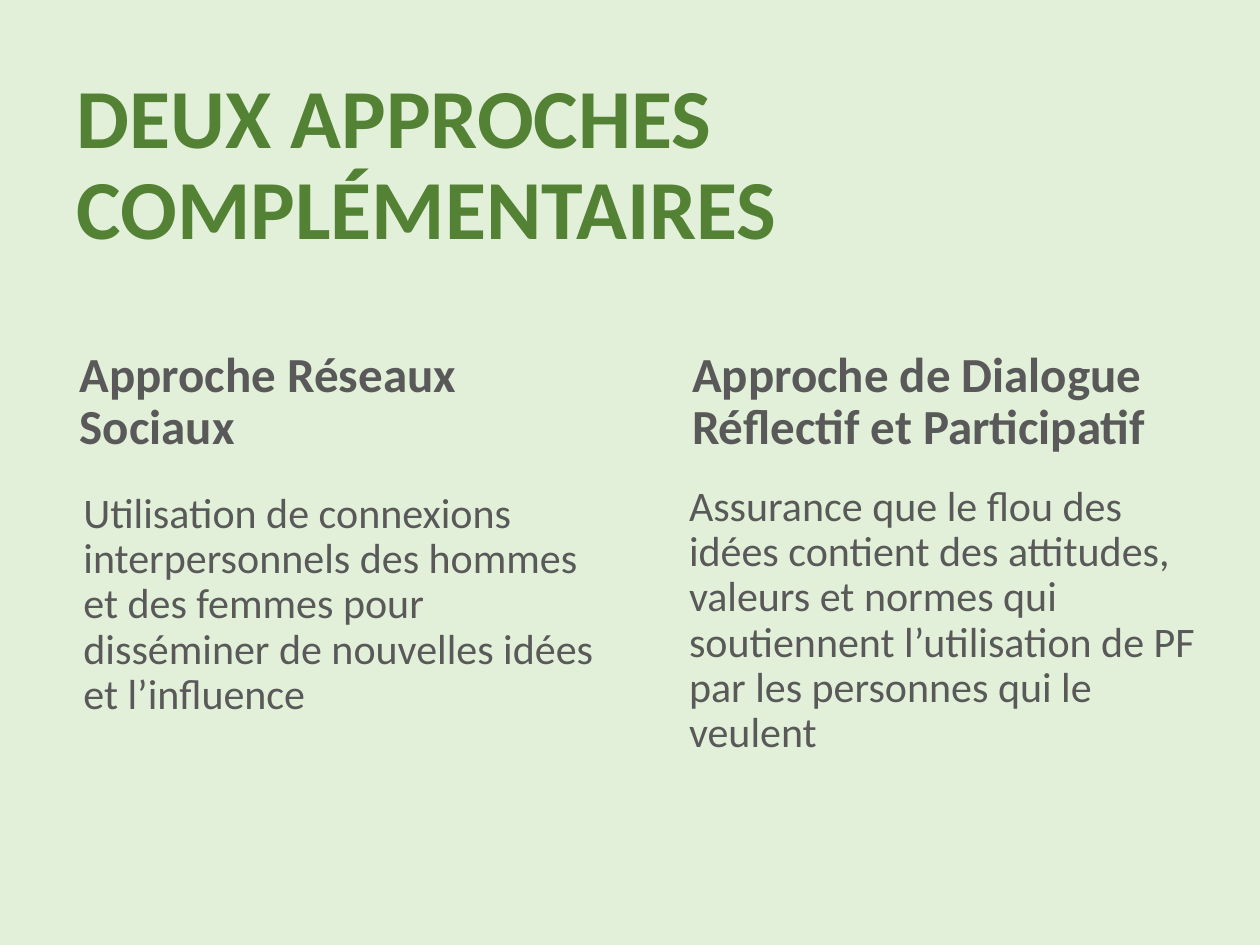
from pptx import Presentation
from pptx.dml.color import RGBColor
from pptx.enum.shapes import MSO_SHAPE
from pptx.enum.text import MSO_ANCHOR, MSO_AUTO_SIZE, PP_ALIGN
from pptx.util import Inches, Pt

ROUNDED, PLAIN = MSO_SHAPE.ROUNDED_RECTANGLE, MSO_SHAPE.RECTANGLE
TOP, MIDDLE, BOTTOM = MSO_ANCHOR.TOP, MSO_ANCHOR.MIDDLE, MSO_ANCHOR.BOTTOM
COLORS = {"background": "E2F0D9", "title": "548235", "text": "595959"}
FONT = "Calibri"

TITLE = "DEUX APPROCHES COMPLÉMENTAIRES"
APPROACHES = [
    {
        "heading": "Approche Réseaux Sociaux",
        "description": "Utilisation de connexions interpersonnels des hommes et des "
                       "femmes pour disséminer de nouvelles idées et l’influence",
        "panel": ROUNDED,
    },
    {
        "heading": "Approche de Dialogue Réflectif et Participatif",
        "description": "Assurance que le flou des idées contient des attitudes, "
                       "valeurs et normes qui soutiennent l’utilisation de PF "
                       "par les personnes qui le veulent",
        "panel": PLAIN,
    },
]

LEFT, COLUMN_WIDTH, COLUMN_STEP = 0.51, 4.42, 4.86
HEADING_TOP, HEADING_HEIGHT = 2.48, 1.21
DESCRIPTION_TOP, DESCRIPTION_HEIGHT = 3.8, 3.7
CORNER_RADIUS = 0.08 if HEADING_HEIGHT < 1 else 0.2


def write(shape, text, size, color, bold, anchor, space_before=0):
    frame = shape.text_frame
    frame.text = text
    frame.word_wrap = True
    frame.auto_size = MSO_AUTO_SIZE.NONE
    frame.vertical_anchor = anchor
    paragraph = frame.paragraphs[0]
    paragraph.alignment = PP_ALIGN.LEFT
    paragraph.line_spacing = 0.9
    paragraph.space_before = Pt(space_before)
    font = paragraph.runs[0].font
    font.name, font.size, font.bold = FONT, Pt(size), bold
    font.color.rgb = RGBColor.from_string(COLORS[color])


def add_panel(slide, kind, left, top, height, corner):
    """Add an invisible panel whose rounded corners inset its text."""
    panel = slide.shapes.add_shape(
        kind, Inches(left), Inches(top), Inches(COLUMN_WIDTH), Inches(height))
    panel.shadow.inherit = False
    panel.fill.background()
    panel.line.fill.background()
    if kind == ROUNDED:
        panel.adjustments[0] = corner
    return panel


def main():
    deck = Presentation()
    deck.slide_width, deck.slide_height = Inches(10), Inches(7.5)
    slide = deck.slides.add_slide(deck.slide_layouts[5])
    background = slide.background.fill
    background.solid()
    background.fore_color.rgb = RGBColor.from_string(COLORS["background"])

    title = slide.shapes.title
    title.left, title.top = Inches(LEFT), Inches(0.99)
    title.width, title.height = Inches(8.62), Inches(0.67)
    write(title, TITLE, 48, "title", True, MIDDLE)

    for column, approach in enumerate(APPROACHES):
        left = LEFT + column * COLUMN_STEP
        heading = add_panel(slide, ROUNDED, left, HEADING_TOP, HEADING_HEIGHT, 0.07)
        write(heading, approach["heading"], 28, "text", True, BOTTOM, 10)
        description = add_panel(slide, approach["panel"], left, DESCRIPTION_TOP,
                                DESCRIPTION_HEIGHT, 0.05)
        write(description, approach["description"], 24, "text", False, TOP, 10)

    deck.save("out.pptx")


if __name__ == "__main__":
    main()
